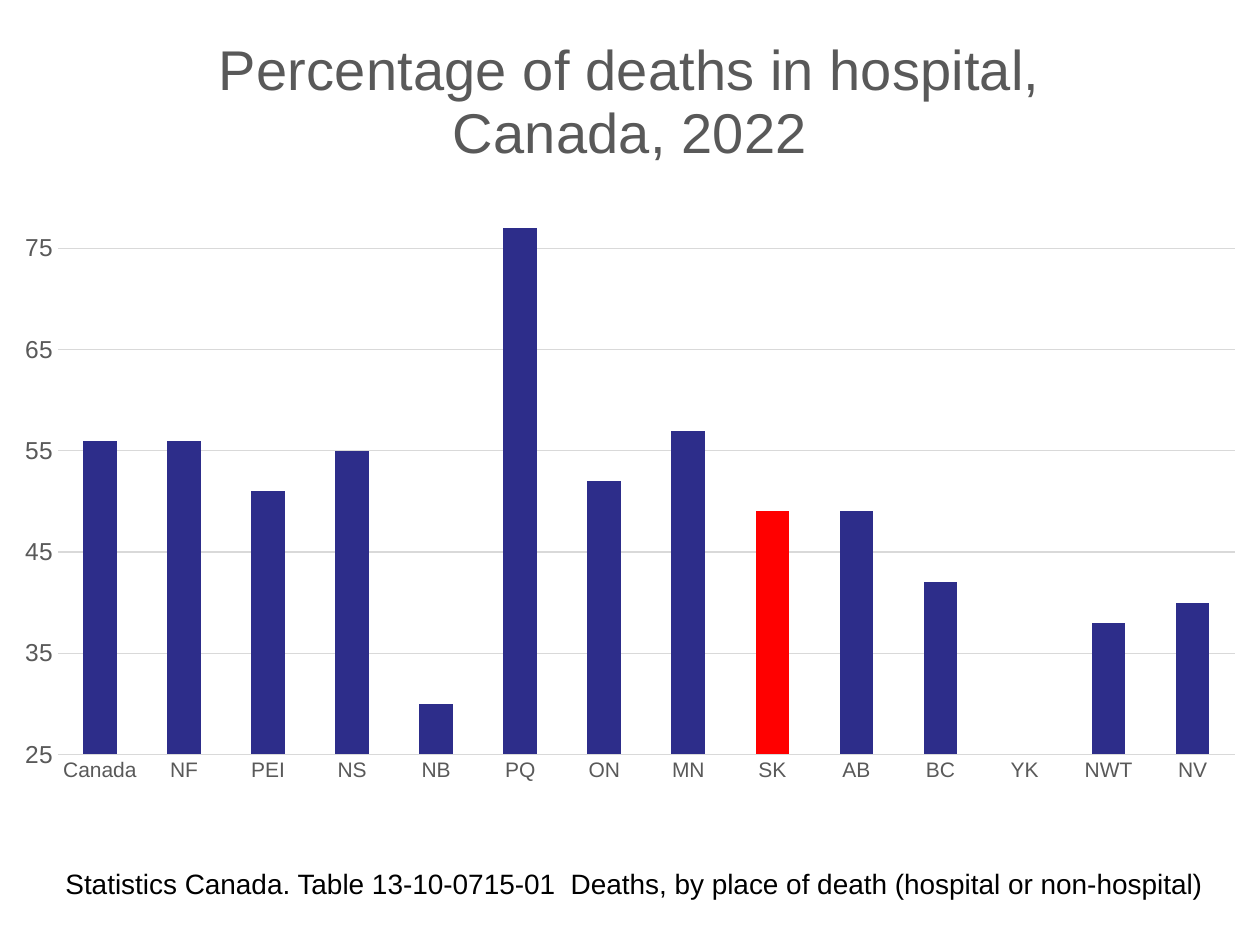
"""Build a slide charting the percentage of deaths in hospital across Canada."""
from dataclasses import dataclass

import pptx
import pptx.chart.data
import pptx.dml.color
import pptx.enum.chart
import pptx.enum.text
import pptx.oxml
import pptx.oxml.ns
import pptx.util

Cm = pptx.util.Cm
Pt = pptx.util.Pt
RGB = pptx.dml.color.RGBColor.from_string


@dataclass(frozen=True)
class Theme:
    """Colours, font and type sizes of the slide."""
    font: str = "Arial"
    bar: str = "2D2D8A"
    highlight: str = "FF0000"
    label: str = "595959"
    grid: str = "D9D9D9"
    text: str = "000000"
    title_size: int = 32
    source_size: int = 16
    value_size: int = 14
    category_size: int = 12
    base_size: int = 10
    line_width: float = 0.75


@dataclass(frozen=True)
class Region:
    """A bar: its label and its percentage of deaths in hospital."""
    name: str
    percent: int | None
    highlighted: bool = False


THEME = Theme()
TITLE = "Percentage of deaths in hospital, Canada, 2022"
SOURCE = "Statistics Canada. Table 13-10-0715-01  Deaths, by place of death (hospital or non-hospital)"
REGIONS = [
    Region("Canada", 56),
    Region("NF", 56),
    Region("PEI", 51),
    Region("NS", 55),
    Region("NB", 30),
    Region("PQ", 77),
    Region("ON", 52),
    Region("MN", 57),
    Region("SK", 49, highlighted=True),
    Region("AB", 49),
    Region("BC", 42),
    Region("YK", None),
    Region("NWT", 38),
    Region("NV", 40),
]


def style_font(font, size: int, color: str) -> None:
    """Set the theme font with a size and a colour."""
    font.name = THEME.font
    font.size = Pt(size)
    font.bold = False
    font.color.rgb = RGB(color)


def style_line(line) -> None:
    """Give a chart line the grid colour and width."""
    line.color.rgb = RGB(THEME.grid)
    line.width = Pt(THEME.line_width)


def style_axis(axis, size: int) -> None:
    """Remove the tick marks and set the labels of an axis."""
    axis.major_tick_mark = pptx.enum.chart.XL_TICK_MARK.NONE
    axis.minor_tick_mark = pptx.enum.chart.XL_TICK_MARK.NONE
    style_font(axis.tick_labels.font, size, THEME.label)


def place_plot(chart, x: float, y: float, w: float, h: float) -> None:
    """Fix the inner plot area as fractions of the chart."""
    plot_area = chart._chartSpace.chart.plotArea
    for layout in plot_area.findall(pptx.oxml.ns.qn("c:layout")):
        plot_area.remove(layout)
    settings = {"layoutTarget": "inner", "xMode": "edge", "yMode": "edge",
                "x": x, "y": y, "w": w, "h": h}
    items = "".join(f'<c:{tag} val="{val}"/>' for tag, val in settings.items())
    plot_area.insert(0, pptx.oxml.parse_xml(
        f'<c:layout {pptx.oxml.ns.nsdecls("c")}>'
        f'<c:manualLayout>{items}</c:manualLayout></c:layout>'))


def add_bar_chart(slide, regions: list[Region]) -> None:
    """Add the column chart with its title and axes."""
    data = pptx.chart.data.CategoryChartData()
    data.categories = [region.name for region in regions]
    data.add_series(TITLE, [region.percent for region in regions])
    chart = slide.shapes.add_chart(
        pptx.enum.chart.XL_CHART_TYPE.COLUMN_CLUSTERED,
        Cm(0), Cm(0), Cm(25.4), Cm(16.08), data).chart
    style_font(chart.font, THEME.base_size, THEME.text)
    chart.has_legend = False

    chart.has_title = True
    chart.chart_title.include_in_layout = False
    r = chart.chart_title.text_frame.paragraphs[0].add_run()
    r.text = TITLE
    style_font(r.font, THEME.title_size, THEME.label)

    plot = chart.plots[0]
    plot.gap_width = 150
    plot.vary_by_categories = False
    series = plot.series[0]
    series.invert_if_negative = False
    series.format.fill.solid()
    series.format.fill.fore_color.rgb = RGB(THEME.bar)
    for i, region in enumerate(regions):
        if region.highlighted:
            fill = series.points[i].format.fill
            fill.solid()
            fill.fore_color.rgb = RGB(THEME.highlight)

    style_axis(chart.category_axis, THEME.category_size)
    style_line(chart.category_axis.format.line)
    axis = chart.value_axis
    style_axis(axis, THEME.value_size)
    axis.minimum_scale, axis.maximum_scale, axis.major_unit = 25, 80, 10
    axis.format.line.fill.background()
    axis.has_major_gridlines = True
    style_line(axis.major_gridlines.format.line)
    place_plot(chart, 0.046, 0.248, 0.934, 0.698)


def add_source(slide) -> None:
    """Add the source line below the chart."""
    tf = slide.shapes.add_textbox(Cm(1.07), Cm(17.35), Cm(23.47), Cm(0.94)).text_frame
    tf.word_wrap = False
    tf.auto_size = pptx.enum.text.MSO_AUTO_SIZE.SHAPE_TO_FIT_TEXT
    r = tf.paragraphs[0].add_run()
    r.text = SOURCE
    style_font(r.font, THEME.source_size, THEME.text)


def main() -> None:
    """Build and save the slide."""
    prs = pptx.Presentation()
    prs.slide_width, prs.slide_height = Cm(25.4), Cm(19.05)
    slide = prs.slides.add_slide(prs.slide_layouts[6])
    add_bar_chart(slide, REGIONS)
    add_source(slide)
    prs.save("out.pptx")


if __name__ == "__main__":
    main()
